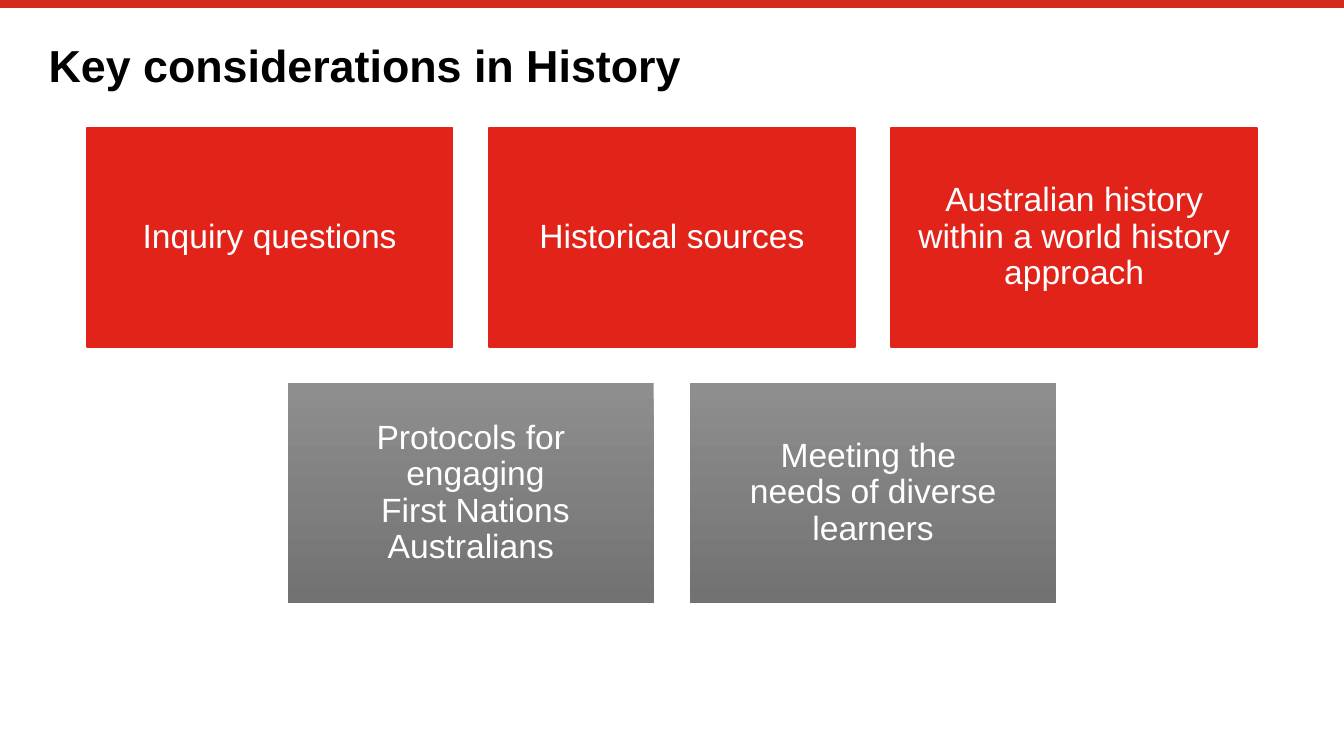
from pptx import Presentation
from pptx.dml.color import RGBColor
from pptx.enum.shapes import MSO_CONNECTOR as Connector, MSO_SHAPE as Shape
from pptx.enum.text import MSO_ANCHOR as Anchor, PP_ALIGN as Align
from pptx.oxml.ns import qn
from pptx.util import Pt
from lxml.etree import SubElement

SLIDE_W, SLIDE_H = 720, 405
CARD_W, CARD_H, GAP = 196, 117.5, 19.5
CARDS_TOP = 68.4
RED = "E2231A"
GREYS = ("8E8E8E", "727272")

CARD_ROWS = [
    (["Inquiry questions",
      "Historical sources",
      "Australian history within a world history approach"], RED),
    (["Protocols for\v engaging\v First Nations Australians",
      "Meeting the \vneeds of diverse learners"], GREYS),
]


def color(hex_code):
    return RGBColor.from_string(hex_code)


def set_text(frame, text, size, hex_code, align, anchor, inset, bold=False):
    frame.text = text
    frame.word_wrap = True
    frame.vertical_anchor = anchor
    frame.margin_left = frame.margin_right = Pt(inset)
    frame.margin_top = frame.margin_bottom = Pt(inset)
    paragraph = frame.paragraphs[0]
    paragraph.alignment = align
    paragraph.line_spacing = 0.9
    for run in paragraph.runs:
        run.font.name = "Arial"
        run.font.size = Pt(size)
        run.font.bold = bold
        run.font.color.rgb = color(hex_code)


def add_top_rule(slide):
    rule = slide.shapes.add_connector(
        Connector.STRAIGHT, Pt(0), Pt(2.1), Pt(SLIDE_W), Pt(2.1))
    rule.line.color.rgb = color("D52B1E")
    rule.line.width = Pt(4.2)
    SubElement(rule._element.spPr, qn("a:effectLst"))


def add_title(slide, text):
    title = slide.shapes.title
    title.left, title.top = Pt(26), Pt(21.6)
    title.width, title.height = Pt(669), Pt(28)
    set_text(title.text_frame, text, 24, "000000", Align.LEFT,
             Anchor.BOTTOM, 0, bold=True)


def add_card(slide, left, top, label, paint):
    card = slide.shapes.add_shape(
        Shape.RECTANGLE, Pt(left), Pt(top), Pt(CARD_W), Pt(CARD_H))
    card.shadow.inherit = False
    if paint == GREYS:
        # Light at the top, dark at the bottom
        card.fill.gradient()
        card.fill.gradient_angle = 270
        for stop, position, shade in zip(card.fill.gradient_stops, (0, 1), paint):
            stop.position = position
            stop.color.rgb = color(shade)
        card.line.fill.background()
    else:
        card.fill.solid()
        card.fill.fore_color.rgb = color(paint)
        card.line.color.rgb = color(paint)
        card.line.width = Pt(1)
    set_text(card.text_frame, label, 18, "FFFFFF", Align.CENTER,
             Anchor.MIDDLE, 5)


def add_card_row(slide, top, labels, paint):
    row_width = len(labels) * (CARD_W + GAP) - GAP
    first_left = (SLIDE_W - row_width) / 2
    for column, label in enumerate(labels):
        add_card(slide, first_left + column * (CARD_W + GAP), top, label, paint)


def main():
    deck = Presentation()
    deck.slide_width, deck.slide_height = Pt(SLIDE_W), Pt(SLIDE_H)
    slide = deck.slides.add_slide(deck.slide_layouts[5])

    # Header
    add_top_rule(slide)
    add_title(slide, "Key considerations in History")

    # Centred rows of cards
    for row, (labels, paint) in enumerate(CARD_ROWS):
        add_card_row(slide, CARDS_TOP + row * (CARD_H + GAP), labels, paint)

    deck.save("out.pptx")


if __name__ == "__main__":
    main()
